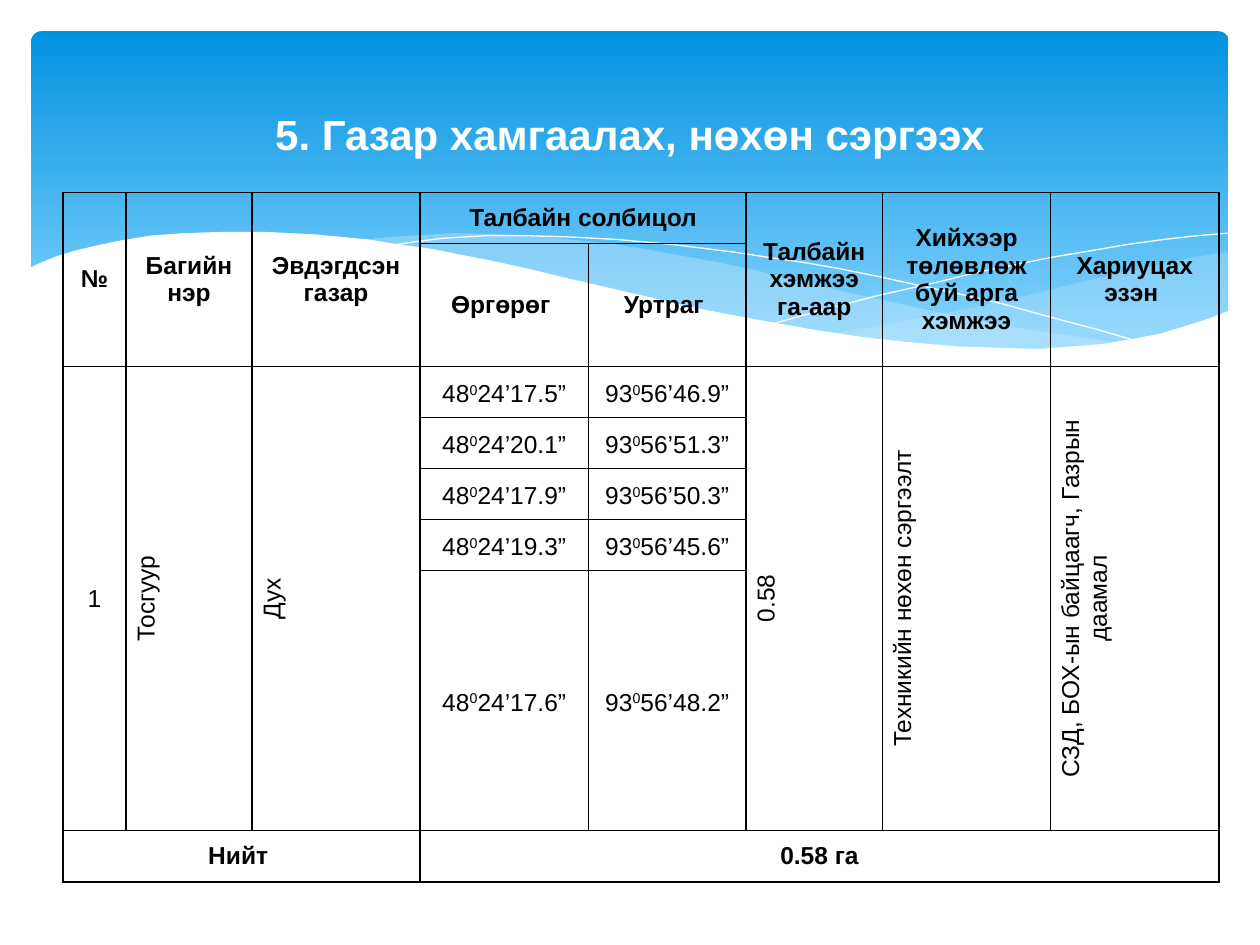
from collections import namedtuple

from lxml import etree
from pptx import Presentation
from pptx import util as u
from pptx.dml.color import RGBColor
from pptx.enum import shapes, text
from pptx.oxml.ns import qn

BLACK = RGBColor(0x00, 0x00, 0x00)
WHITE = RGBColor(0xFF, 0xFF, 0xFF)
SKY = RGBColor(0x02, 0x93, 0xE0)
PALE_SKY = RGBColor(0x83, 0xD3, 0xFE)
MIST = RGBColor(0xC6, 0xE7, 0xFC)
FONT = "Arial"

Box = namedtuple("Box", "left top width height")

WAVE_UNIT = u.Cm(0.0254)
RIGHT_WAVE = [
    (975, 200), (948, 204), (921, 210), (891, 216), (861, 223), (805, 237),
    (753, 248), (706, 257), (661, 265), (691, 269), (719, 272), (745, 275),
    (769, 277), (803, 278), (835, 277), (863, 275), (889, 272), (913, 267),
    (935, 262), (949, 257), (963, 252), (976, 247), (976, 200)]
MIDDLE_WAVE = [
    (893, 273), (866, 269), (807, 260), (741, 247), (668, 231), (629, 222),
    (598, 214), (569, 208), (541, 203), (514, 198), (489, 194), (442, 189),
    (399, 186), (361, 185), (328, 187), (299, 189), (286, 191), (323, 196),
    (362, 203), (404, 211), (449, 222), (491, 232), (530, 240), (566, 248),
    (601, 255), (634, 261), (665, 266), (695, 270), (722, 274), (748, 276),
    (773, 277), (796, 278), (828, 278), (857, 277), (876, 275)]
LONG_CURVE = [
    (309, 195), (328, 192), (353, 189), (387, 187), (416, 187), (450, 188),
    (489, 190), (533, 194), (582, 200), (608, 204), (636, 208), (665, 213),
    (695, 219), (727, 226), (760, 233), (795, 241), (831, 251), (869, 261),
    (907, 272)]
SHORT_CURVE = [
    (613, 257), (653, 246), (695, 235), (748, 223), (776, 216), (806, 210),
    (836, 204), (866, 199), (895, 194), (924, 190), (951, 187), (975, 185)]
WHITE_WAVE = [
    (977, 246), (959, 253), (940, 259), (920, 265), (899, 269), (875, 273),
    (850, 275), (823, 277), (793, 276), (761, 275), (726, 272), (688, 268),
    (648, 262), (603, 254), (555, 245), (503, 233), (447, 220), (418, 213),
    (391, 207), (365, 202), (340, 197), (316, 194), (292, 190), (271, 188),
    (250, 186), (230, 185), (211, 184), (177, 184), (146, 185), (119, 187),
    (95, 191), (76, 195), (59, 199), (46, 203), (36, 207), (29, 210),
    (23, 213), (23, 329), (977, 329)]

COLUMN_WIDTHS = [1.27, 2.54, 3.39, 3.39, 3.18, 2.75, 3.39, 3.39]
ROW_COUNT = 8
ROW_HEIGHT = 1.03
HEADERS = {
    0: "№", 1: "Багийн нэр", 2: "Эвдэгдсэн газар", 5: "Талбайн хэмжээ га-аар",
    6: "Хийхээр төлөвлөж буй арга хэмжээ", 7: "Хариуцах эзэн "}
DETAILS = {
    0: "1", 1: "Тосгуур", 2: "Дух", 5: "0.58",
    6: "Техникийн нөхөн сэргээлт", 7: "СЗД, БОХ-ын байцаагч, Газрын даамал"}
COORDINATES = [
    ("24’17.5”", "56’46.9”"), ("24’20.1”", "56’51.3”"),
    ("24’17.9”", "56’50.3”"), ("24’19.3”", "56’45.6”"),
    ("24’17.6”", "56’48.2”")]


def add_wave(page, box, points, fill=None, opacity=100):
    builder = page.shapes.build_freeform(*points[0], scale=WAVE_UNIT)
    builder.add_line_segments(points[1:], close=fill is not None)
    wave = builder.convert_to_shape(box.left, box.top)
    wave.shadow.inherit = False
    if fill is None:
        wave.fill.background()
        wave.line.color.rgb = WHITE
        wave.line.width = u.Cm(0)
        return
    wave.line.fill.background()
    wave.fill.solid()
    wave.fill.fore_color.rgb = fill
    if opacity < 100:
        color = next(wave.element.spPr.iter(qn("a:srgbClr")))
        etree.SubElement(color, qn("a:alpha"), val=str(opacity * 1000))


def add_backdrop(page, box):
    inset = u.Cm(0.63)
    panel = page.shapes.add_shape(
        shapes.MSO_SHAPE.ROUNDED_RECTANGLE, box.left + inset, box.top + inset,
        box.width - 2 * inset, u.Cm(6.86))
    panel.adjustments[0] = 0.03
    panel.shadow.inherit = False
    panel.line.fill.background()
    panel.fill.gradient()
    panel.fill.gradient_angle = 270
    for stop, color, position in zip(
            panel.fill.gradient_stops, (SKY, PALE_SKY), (0, 0.9)):
        stop.color.rgb = color
        stop.position = position
    add_wave(page, box, RIGHT_WAVE, MIST, 29)
    add_wave(page, box, MIDDLE_WAVE, MIST, 40)
    add_wave(page, box, LONG_CURVE)
    add_wave(page, box, SHORT_CURVE)
    add_wave(page, box, WHITE_WAVE, WHITE)


def format_spans(para, size, color, bold):
    para.alignment = text.PP_ALIGN.CENTER
    for span in para.runs:
        span.font.name = FONT
        span.font.size = u.Pt(size)
        span.font.bold = bold
        span.font.color.rgb = color


def place_title(page, box, wording):
    title = page.shapes.title
    title.left, title.top, title.width, title.height = box
    title.text_frame.text = wording
    title.text_frame.vertical_anchor = text.MSO_ANCHOR.MIDDLE
    format_spans(title.text_frame.paragraphs[0], 24, WHITE, True)
    title.element.getparent().append(title.element)


def draw_borders(cell):
    properties = cell._tc.get_or_add_tcPr()
    for position, side in enumerate(("a:lnL", "a:lnR", "a:lnT", "a:lnB")):
        line = etree.Element(qn(side), w=str(u.Pt(1)))
        fill = etree.SubElement(line, qn("a:solidFill"))
        etree.SubElement(fill, qn("a:srgbClr"), val=str(BLACK))
        properties.insert(position, line)


def write_cell(cell, wording, bold=False, upright=True):
    cell.text_frame.text = wording
    format_spans(cell.text_frame.paragraphs[0], 14, BLACK, bold)
    if not upright:
        cell._tc.get_or_add_tcPr().set("vert", "vert270")


def write_coordinate(cell, degrees, minutes):
    para = cell.text_frame.paragraphs[0]
    for part in (degrees, "0", minutes):
        para.add_run().text = part
    format_spans(para, 14, BLACK, False)
    para.line_spacing = 1.15
    para.runs[1]._r.get_or_add_rPr().set("baseline", "30000")
    cell.margin_left = cell.margin_right = u.Cm(0.17)
    cell.margin_top = cell.margin_bottom = u.Cm(0)


def add_land_table(page, box):
    table = page.shapes.add_table(ROW_COUNT, len(COLUMN_WIDTHS), *box).table
    table.first_row = table.horz_banding = False
    for column, width in zip(table.columns, COLUMN_WIDTHS):
        column.width = u.Cm(width)
    for row in table.rows:
        row.height = u.Cm(ROW_HEIGHT)
    for cell in table.iter_cells():
        cell.fill.background()
        cell.vertical_anchor = text.MSO_ANCHOR.MIDDLE
        draw_borders(cell)

    for column in HEADERS:
        table.cell(0, column).merge(table.cell(1, column))
        write_cell(table.cell(0, column), HEADERS[column], bold=True)
        table.cell(2, column).merge(table.cell(6, column))
        write_cell(table.cell(2, column), DETAILS[column], upright=column == 0)

    table.cell(0, 3).merge(table.cell(0, 4))
    write_cell(table.cell(0, 3), "Талбайн солбицол", bold=True)
    write_cell(table.cell(1, 3), "Өргөрөг ", bold=True)
    write_cell(table.cell(1, 4), "Уртраг ", bold=True)
    for row, (latitude, longitude) in enumerate(COORDINATES, start=2):
        write_coordinate(table.cell(row, 3), "48", latitude)
        write_coordinate(table.cell(row, 4), "93", longitude)

    for first, last, wording in ((0, 2, "Нийт "), (3, 7, "0.58 га")):
        table.cell(7, first).merge(table.cell(7, last))
        write_cell(table.cell(7, first), wording, bold=True)


def main():
    deck = Presentation()
    deck.slide_width, deck.slide_height = u.Cm(25.4), u.Cm(19.05)
    page = deck.slides.add_slide(deck.slide_layouts[5])
    add_backdrop(page, Box(u.Cm(0), u.Cm(0), deck.slide_width, deck.slide_height))
    place_title(page, Box(u.Cm(1.27), u.Cm(0.95), u.Cm(22.86), u.Cm(3.48)),
                "5. Газар хамгаалах, нөхөн сэргээх")
    add_land_table(page, Box(u.Cm(1.27), u.Cm(3.88), u.Cm(23.3), u.Cm(8.81)))
    deck.save("out.pptx")


if __name__ == "__main__":
    main()
